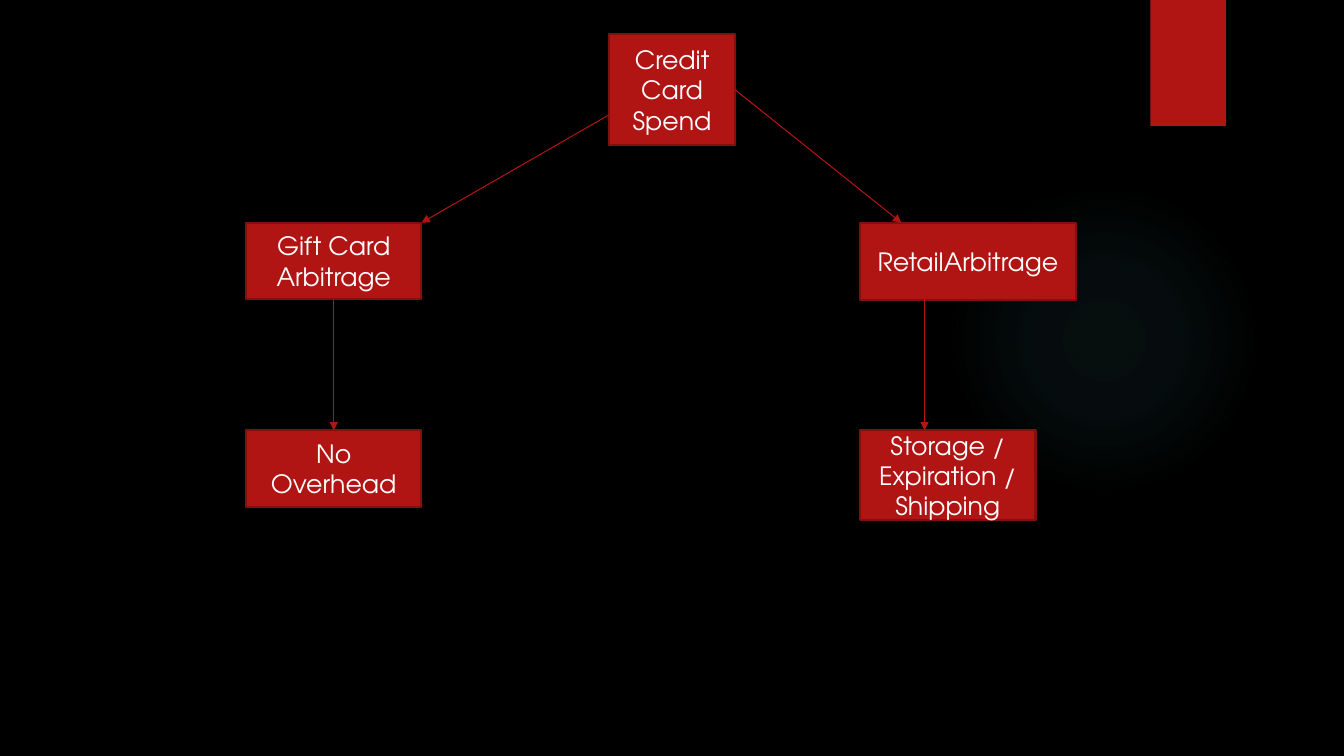
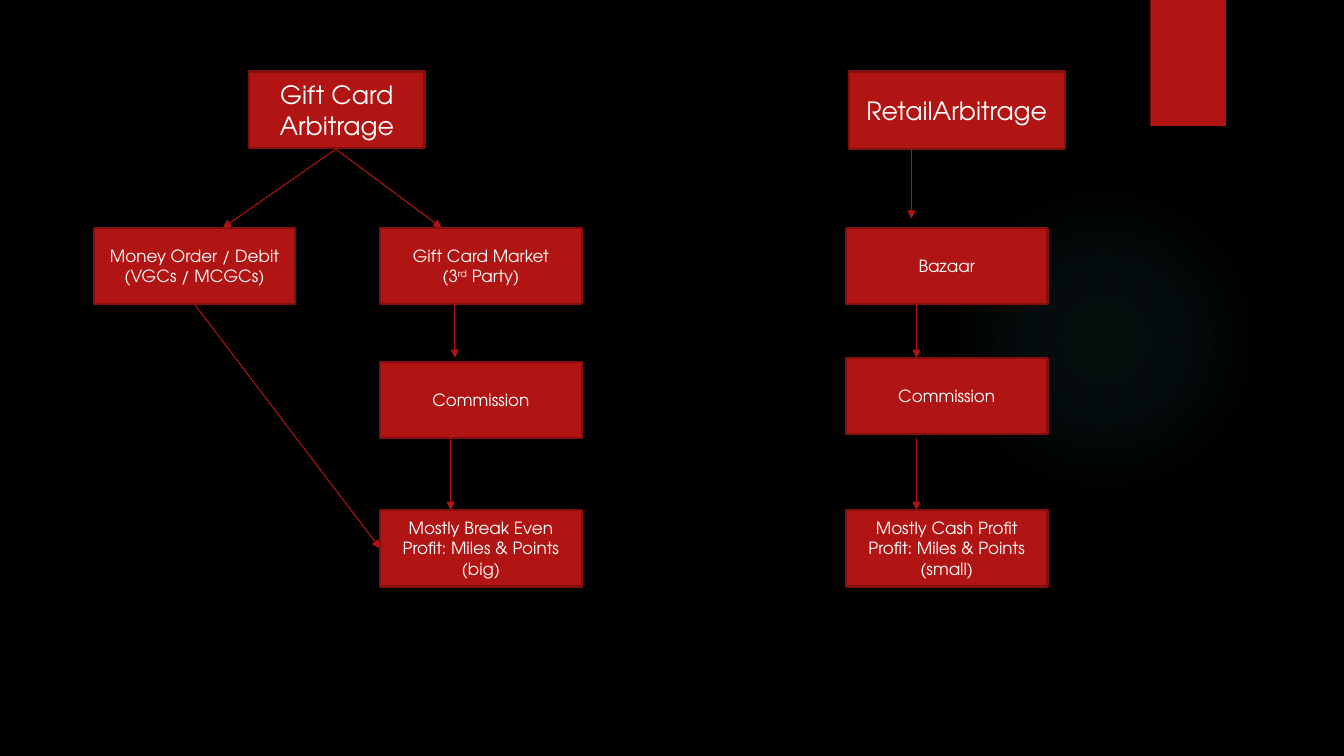
from dataclasses import dataclass

from lxml import etree
from pptx import Presentation
from pptx import util as u
from pptx.dml.color import RGBColor
from pptx.enum import shapes, text
from pptx.oxml import ns

KIND = shapes.MSO_SHAPE


@dataclass(frozen=True)
class Theme:
    background: str = "000000"
    accent: str = "B01513"
    edge: str = "82100E"
    ink: str = "FFFFFF"
    glow: str = "50B9C1"
    shadow: str = "000000"
    font: str = "TeX Gyre Adventor"
    heading: int = 18
    body: int = 12
    border: float = 1.5
    arrow: float = 0.75


def add_element(parent, tag, **attributes):
    element = etree.SubElement(parent, ns.qn(tag))
    for name, value in attributes.items():
        element.set(name, str(value))
    return element


def add_color(parent, color, percent):
    element = add_element(parent, "a:srgbClr", val=color)
    add_element(element, "a:alpha", val=percent * 1000)


class FlowDeck:
    def __init__(self, theme):
        self.theme = theme
        self.deck = Presentation()
        self.deck.slide_width = u.Inches(13.33)
        self.deck.slide_height = u.Inches(7.5)
        self.page = None

    def add_page(self):
        self.page = self.deck.slides.add_slide(self.deck.slide_layouts[6])
        fill = self.page.background.fill
        fill.solid()
        fill.fore_color.rgb = RGBColor.from_string(self.theme.background)
        self.add_glow()
        self.add_band()

    def add_shape(self, kind, left, top, width, height):
        shape = self.page.shapes.add_shape(
            kind, *map(u.Inches, (left, top, width, height)))
        shape.shadow.inherit = False
        shape.fill.solid()
        shape.fill.fore_color.rgb = RGBColor.from_string(self.theme.accent)
        shape.line.fill.background()
        return shape

    def add_glow(self):
        glow = self.add_shape(KIND.OVAL, 9.41, 1.83, 3.08, 3.08)
        glow.fill.gradient()
        gradient = glow._element.spPr.find(ns.qn("a:gradFill"))
        for child in list(gradient):
            gradient.remove(child)
        stops = add_element(gradient, "a:gsLst")
        for position, opacity in ((0, 7), (36, 6), (69, 0)):
            stop = add_element(stops, "a:gs", pos=position * 1000)
            add_color(stop, self.theme.glow, opacity)
        circle = add_element(gradient, "a:path", path="circle")
        add_element(circle, "a:fillToRect", l=50000, t=50000, r=50000, b=50000)

    def add_band(self):
        band = self.add_shape(KIND.RECTANGLE, 11.41, 0, 0.75, 1.25)
        effects = band._element.spPr.find(ns.qn("a:effectLst"))
        shadow = add_element(effects, "a:outerShdw", blurRad=u.Pt(3), dist=u.Pt(2),
                             dir=90 * 60000, rotWithShape=0)
        add_color(shadow, self.theme.shadow, 45)

    def add_box(self, kind, size, left, top, width, height, lines):
        box = self.add_shape(kind, left, top, width, height)
        box.line.color.rgb = RGBColor.from_string(self.theme.edge)
        box.line.width = u.Pt(self.theme.border)
        frame = box.text_frame
        frame.word_wrap = True
        frame.vertical_anchor = text.MSO_ANCHOR.MIDDLE
        for index, line in enumerate(lines):
            para = frame.add_paragraph() if index else frame.paragraphs[0]
            para.alignment = text.PP_ALIGN.CENTER
            for part, words in enumerate(line.split("^")):
                span = para.add_run()
                span.text = words
                span.font.name = self.theme.font
                span.font.size = u.Pt(size)
                span.font.color.rgb = RGBColor.from_string(self.theme.ink)
                if part % 2:
                    span._r.get_or_add_rPr().set("baseline", "30000")

    def add_topic(self, left, top, label, width=1.74, height=0.76):
        self.add_box(KIND.FLOWCHART_PROCESS, self.theme.heading,
                     left, top, width, height, [label])

    def add_step(self, left, top, *lines):
        self.add_box(KIND.RECTANGLE, self.theme.body, left, top, 2, 0.76, lines)

    def add_arrow(self, start, end):
        arrow = self.page.shapes.add_connector(
            shapes.MSO_CONNECTOR.STRAIGHT, *map(u.Inches, (*start, *end)))
        arrow.line.color.rgb = RGBColor.from_string(self.theme.accent)
        arrow.line.width = u.Pt(self.theme.arrow)
        add_element(arrow.line._get_or_add_ln(), "a:tailEnd", type="triangle")
        add_element(arrow._element.spPr, "a:effectLst")

    def add_drop(self, x, top, bottom):
        self.add_arrow((x, top), (x, bottom))


def build_overview(flow):
    flow.add_page()
    gift, retail = 2.44, 8.53
    branch, result = 2.21, 4.27
    flow.add_topic(6.04, 0.34, "Credit Card Spend", 1.25, 1.1)
    flow.add_topic(gift, branch, "Gift Card Arbitrage")
    flow.add_topic(retail, branch, "RetailArbitrage", 2.14, 0.77)
    flow.add_topic(gift, result, "No Overhead")
    flow.add_topic(retail, result, "Storage / Expiration / Shipping", height=0.89)
    flow.add_arrow((6.04, 1.14), (4.18, branch))
    flow.add_arrow((7.29, 0.89), (8.94, branch))
    for x in (3.31, 9.17):
        flow.add_drop(x, 2.97, result)


def build_channels(flow):
    flow.add_page()
    order, market, retail = 0.93, 3.77, 8.39
    channel, fee, profit = 2.26, 3.55, 5.06
    flow.add_topic(2.47, 0.71, "Gift Card Arbitrage")
    flow.add_topic(8.42, 0.71, "RetailArbitrage", 2.14, 0.77)
    flow.add_step(order, channel, "Money Order / Debit", "(VGCs / MCGCs)")
    flow.add_step(market, channel, "Gift Card Market", "(3^rd^ Party)")
    flow.add_step(retail, channel, "Bazaar")
    flow.add_step(market, 3.59, "Commission")
    flow.add_step(retail, fee, "Commission")
    flow.add_step(market, profit, "Mostly Break Even", "Profit: Miles & Points (big)")
    flow.add_step(retail, profit, "Mostly Cash Profit", "Profit: Miles & Points (small)")
    for x in (2.21, 4.38):
        flow.add_arrow((3.33, 1.48), (x, channel))
    flow.add_drop(9.04, 1.48, 2.17)
    for fee_x, profit_x in ((4.51, 4.47), (9.09, 9.09)):
        flow.add_drop(fee_x, 3.02, fee)
        flow.add_drop(profit_x, 4.35, profit)
    flow.add_arrow((order + 1, 3.02), (market, profit + 0.38))


def main():
    flow = FlowDeck(Theme())
    build_overview(flow)
    build_channels(flow)
    flow.deck.save("out.pptx")


if __name__ == "__main__":
    main()
